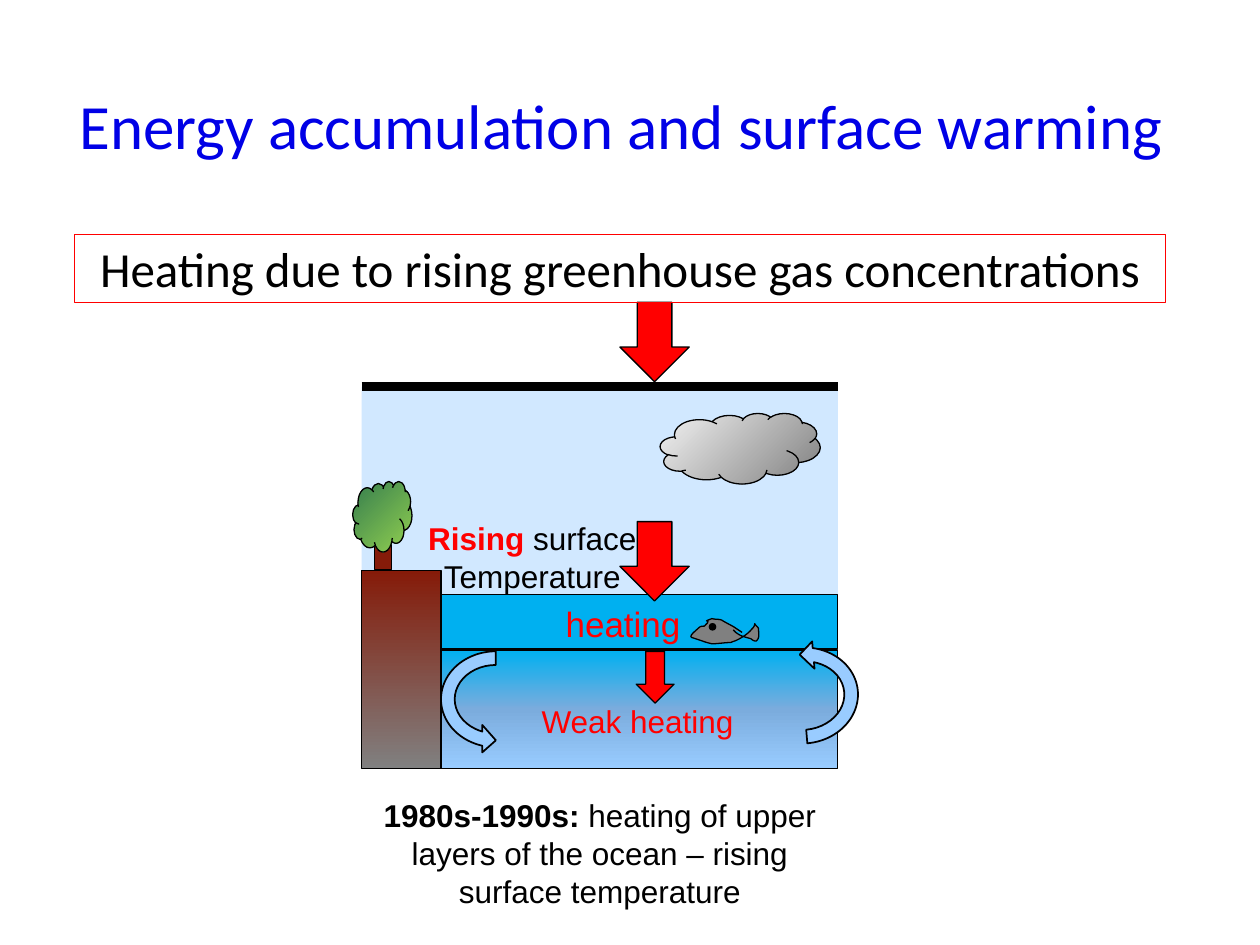
from lxml import etree
from pptx import Presentation
from pptx.dml.color import RGBColor
from pptx.enum.shapes import MSO_CONNECTOR, MSO_SHAPE
from pptx.enum.text import MSO_ANCHOR, MSO_AUTO_SIZE, PP_ALIGN
from pptx.oxml import parse_xml
from pptx.oxml.ns import nsdecls, qn
from pptx.util import Inches, Pt

RECT = MSO_SHAPE.RECTANGLE
DOWN_ARROW = MSO_SHAPE.DOWN_ARROW
CLOUD = MSO_SHAPE.CLOUD
CIRCULAR_ARROW = MSO_SHAPE.CIRCULAR_ARROW
OVAL = MSO_SHAPE.OVAL
STRAIGHT = MSO_CONNECTOR.STRAIGHT
CENTER = PP_ALIGN.CENTER
MIDDLE = MSO_ANCHOR.MIDDLE
GROW = MSO_AUTO_SIZE.SHAPE_TO_FIT_TEXT
color = RGBColor.from_string

LEFT, RIGHT, SHORE = 2.87, 6.65, 3.5
WIDTH, OCEAN_WIDTH = RIGHT - LEFT, RIGHT - SHORE
SKY_TOP = 3.07

deck = Presentation()
deck.slide_width, deck.slide_height = Inches(10), Inches(7.5)
page = deck.slides.add_slide(deck.slide_layouts[5])
shapes = page.shapes


def add_part(kind, left, top, width, height, fill=None, outline="000000", weight=0.75):
    part = shapes.add_shape(kind, Inches(left), Inches(top), Inches(width), Inches(height))
    part.shadow.inherit = False
    if fill:
        part.fill.solid()
        part.fill.fore_color.rgb = color(fill)
    else:
        part.fill.background()
    if outline:
        part.line.color.rgb = color(outline)
        part.line.width = Pt(weight)
    else:
        part.line.fill.background()
    return part


def write_text(box, *spans, size=18, font="Arial", anchor=None):
    """Fill the box with one centred paragraph of (text, colour, bold) spans."""
    frame = box.text_frame
    frame.word_wrap = True
    if anchor is not None:
        frame.vertical_anchor = anchor
    para = frame.paragraphs[0]
    para.alignment = CENTER
    for text, hex_color, bold in spans:
        span = para.add_run()
        span.text = text
        span.font.size, span.font.name, span.font.bold = Pt(size), font, bold
        span.font.color.rgb = color(hex_color)


title = shapes.title
title.left, title.top, title.width, title.height = map(Inches, (0.43, 0.36, 9, 1.25))
write_text(title, ("Energy accumulation and surface warming", "0000E6", False),
           size=36, font="Calibri", anchor=MIDDLE)

# Sky, ocean and land
sky = add_part(RECT, LEFT, SKY_TOP, WIDTH, 1.65, "99CCFF", None)
sky_color = sky._element.spPr.find(qn("a:solidFill"))[0]
etree.SubElement(sky_color, qn("a:alpha")).set("val", "45000")
deep_ocean = add_part(RECT, SHORE, 5.16, OCEAN_WIDTH, 0.94)
cliff = add_part(RECT, LEFT, 4.53, SHORE - LEFT, 1.57)
add_part(RECT, SHORE, 4.72, OCEAN_WIDTH, 0.43, "00B0F0")
add_part(DOWN_ARROW, 4.92, 2.4, 0.55, 0.63, "FF0000")
add_part(DOWN_ARROW, 5.05, 5.17, 0.3, 0.41, "FF0000")
add_part(RECT, 2.97, 4.26, 0.14, 0.26, "851B09")
tree_crown = add_part(CLOUD, 2.8, 3.82, 0.47, 0.56)

# Fish outline: each row holds two control points and an end point
fish_start = (5.89, 5.02)
fish_curves = [
    (5.8, 4.96, 5.85, 4.99, 5.74, 4.93), (5.72, 4.91, 5.68, 4.92, 5.65, 4.91),
    (5.55, 4.95, 5.67, 4.9, 5.59, 4.97), (5.58, 4.97, 5.56, 4.97, 5.55, 4.98),
    (5.53, 5, 5.46, 5.05, 5.49, 5.06), (5.49, 5.06, 5.61, 5.1, 5.61, 5.1),
    (5.61, 5.1, 5.65, 5.11, 5.65, 5.11), (5.7, 5.11, 5.75, 5.1, 5.8, 5.1),
    (5.82, 5.09, 5.83, 5.09, 5.85, 5.08), (5.89, 5.06, 5.94, 5.03, 5.97, 4.99),
    (5.98, 4.98, 5.99, 4.97, 5.99, 4.95), (6, 4.97, 6.02, 4.98, 6.02, 4.99),
    (6.02, 5.02, 6.03, 5.06, 6.01, 5.08), (6, 5.1, 5.97, 5.08, 5.96, 5.07),
    (5.89, 5.05, 5.88, 5.05, 5.84, 5.02), (5.83, 5.01, 5.83, 5.01, 5.82, 5),
]
STEPS = 6
fish_points = []
x0, y0 = fish_start
for x1, y1, x2, y2, x3, y3 in fish_curves:
    for step in range(1, STEPS + 1):
        t = step / STEPS
        a, b, c, d = (1 - t) ** 3, 3 * t * (1 - t) ** 2, 3 * t * t * (1 - t), t ** 3
        fish_points.append((Inches(a * x0 + b * x1 + c * x2 + d * x3),
                            Inches(a * y0 + b * y1 + c * y2 + d * y3)))
    x0, y0 = x3, y3
outline = shapes.build_freeform(*map(Inches, fish_start))
outline.add_line_segments(fish_points, close=False)
fish = outline.convert_to_shape()
fish.shadow.inherit = False
fish.fill.solid()
fish.fill.fore_color.rgb = color("808080")
fish.line.color.rgb = color("000000")
fish.line.width = Pt(0.75)
add_part(OVAL, 5.63, 4.95, 0.05, 0.05, "000000")

sky_limit = shapes.add_connector(STRAIGHT, Inches(LEFT), Inches(SKY_TOP),
                                 Inches(RIGHT), Inches(SKY_TOP))
sky_limit.line.color.rgb = color("000000")
sky_limit.line.width = Pt(5)
etree.SubElement(sky_limit._element.spPr, qn("a:effectLst"))

banner = add_part(RECT, 0.59, 1.86, 8.66, 0.54, outline="FF0000")
write_text(banner, ("Heating due to rising greenhouse gas concentrations", "000000", False),
           size=28, font="Calibri", anchor=MIDDLE)

labels = [
    (3.29, 4.07, 1.87, 0.71, 18,
     [("Rising", "FF0000", True), (" surface Temperature", "000000", False)]),
    (4.29, 4.73, 1.31, 0.44, 20, [("heating", "FF0000", False)]),
    (3.94, 5.52, 2.24, 0.4, 18, [("Weak heating", "FF0000", False)]),
    (LEFT, 6.27, WIDTH, 1.01, 18,
     [("1980s-1990s: ", "000000", True),
      ("heating of upper layers of the ocean – rising surface temperature",
       "000000", False)]),
]
for left, top, width, height, size, spans in labels:
    box = shapes.add_textbox(Inches(left), Inches(top), Inches(width), Inches(height))
    write_text(box, *spans, size=size)
    box.text_frame.auto_size = GROW

add_part(DOWN_ARROW, 4.92, 4.14, 0.55, 0.63, "FF0000")
sky_cloud = add_part(CLOUD, 5.24, 3.28, 1.27, 0.56)

# Ocean circulation
for left, top, angle in [(3.5, 5.06, 270), (5.94, 5.03, 85)]:
    current = add_part(CIRCULAR_ARROW, left, top, 0.87, 0.98, "99CCFF", weight=1)
    current.rotation = angle
    current._element.spPr.find(qn("a:xfrm")).set("flipH", "1")

# Gradient fills
DOWNWARD = '<a:lin ang="5400000" scaled="0"/>'
FROM_CORNER = '<a:path path="circle"><a:fillToRect l="100000" t="100000"/></a:path>'
gradients = [
    (deep_ocean, [(0, "00B0F0"), (50, "7BACDD"), (100, "99CCFF")], DOWNWARD),
    (cliff, [(0, "851B09"), (100, "808080")], DOWNWARD),
    (tree_crown, [(0, "92D050"), (100, "367E4E")], FROM_CORNER),
    (sky_cloud, [(0, "808080"), (100, "F2F2F2")], FROM_CORNER),
]
for part, stops, direction in gradients:
    stop_xml = "".join(f'<a:gs pos="{place * 1000}"><a:srgbClr val="{shade}"/></a:gs>'
                       for place, shade in stops)
    gradient = parse_xml(f'<a:gradFill {nsdecls("a")} rotWithShape="1">'
                         f'<a:gsLst>{stop_xml}</a:gsLst>{direction}</a:gradFill>')
    properties = part._element.spPr
    properties.replace(properties.find(qn("a:noFill")), gradient)

deck.save("out.pptx")
